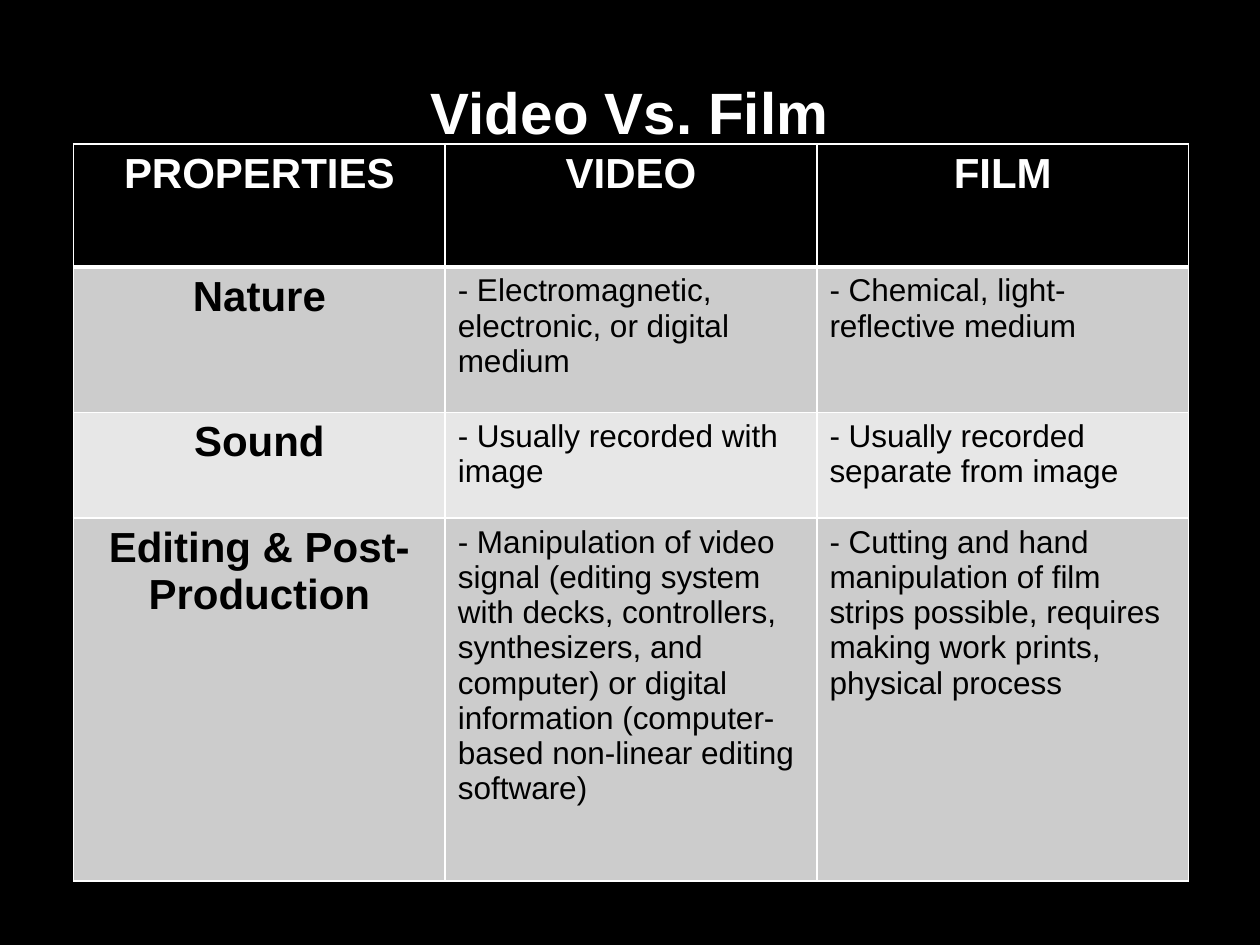
from typing import NamedTuple

from lxml import etree
from pptx import Presentation
from pptx.dml.color import RGBColor
from pptx.enum.text import PP_ALIGN
from pptx.oxml.ns import qn
from pptx.util import Pt

BLACK = RGBColor(0x00, 0x00, 0x00)
WHITE = RGBColor(0xFF, 0xFF, 0xFF)
DARK_BAND = RGBColor(0xCC, 0xCC, 0xCC)
LIGHT_BAND = RGBColor(0xE7, 0xE7, 0xE7)
LEFT, CENTER = PP_ALIGN.LEFT, PP_ALIGN.CENTER

FONT = "Arial"
TABLE_LEFT, TABLE_TOP = 42, 82.3
COLUMN_WIDTH = 212.4
THIN, THICK = 1, 3


class ComparisonRow(NamedTuple):
    height: float
    label: str
    video: str
    film: str


ROWS = [
    ComparisonRow(70.3, "PROPERTIES", "VIDEO", "FILM"),
    ComparisonRow(83, "Nature", "- Electromagnetic, electronic, or digital medium",
                  "- Chemical, light-reflective medium"),
    ComparisonRow(60.5, "Sound", "- Usually recorded with image",
                  "- Usually recorded separate from image"),
    ComparisonRow(207.3, "Editing & Post-Production",
                  "- Manipulation of video signal (editing system with decks, "
                  "controllers, synthesizers, and computer) or digital information "
                  "(computer-based non-linear editing software)",
                  "- Cutting and hand manipulation of film strips possible, "
                  "requires making work prints, physical process"),
]


def write_text(frame, text: str, *, size: float, color: RGBColor = BLACK,
               bold: bool = False, align=LEFT) -> None:
    frame.word_wrap = True
    para = frame.paragraphs[0]
    para.alignment = align
    span = para.add_run()
    span.text = text
    span.font.name = FONT
    span.font.size = Pt(size)
    span.font.bold = bold
    span.font.color.rgb = color


def set_borders(cell, **widths: float) -> None:
    """Draw white borders; keys are L, R, T and B, in that order."""
    properties = cell._tc.get_or_add_tcPr()
    for index, (side, width) in enumerate(widths.items()):
        line = etree.Element(qn(f"a:ln{side}"), w=str(Pt(width)))
        fill = etree.SubElement(line, qn("a:solidFill"))
        etree.SubElement(fill, qn("a:srgbClr"), val=str(WHITE))
        properties.insert(index, line)


def add_title(page, text: str) -> None:
    box = page.shapes.add_textbox(Pt(0), Pt(36.7), Pt(720), Pt(46))
    box.text_frame.margin_top = Pt(7)
    write_text(box.text_frame, text, size=33.3, color=WHITE, bold=True, align=CENTER)


def add_comparison(page, rows: list[ComparisonRow]) -> None:
    columns = len(ComparisonRow._fields) - 1
    table = page.shapes.add_table(
        len(rows), columns, Pt(TABLE_LEFT), Pt(TABLE_TOP),
        Pt(columns * COLUMN_WIDTH), Pt(sum(row.height for row in rows))).table
    for column in table.columns:
        column.width = Pt(COLUMN_WIDTH)
    for r, row in enumerate(rows):
        table.rows[r].height = Pt(row.height)
        header = r == 0
        band = BLACK if header else DARK_BAND if r % 2 else LIGHT_BAND
        for c, text in enumerate(row[1:]):
            cell = table.cell(r, c)
            cell.fill.solid()
            cell.fill.fore_color.rgb = band
            heading = header or c == 0
            write_text(cell.text_frame, text, size=24 if heading else 18,
                       color=WHITE if header else BLACK, bold=heading,
                       align=CENTER if heading else LEFT)
            set_borders(cell, L=THIN, R=THIN, T=THICK if r == 1 else THIN,
                        B=THICK if header else THIN)


def main() -> None:
    deck = Presentation()
    deck.slide_width, deck.slide_height = Pt(720), Pt(540)
    page = deck.slides.add_slide(deck.slide_layouts[6])
    page.background.fill.solid()
    page.background.fill.fore_color.rgb = BLACK
    add_title(page, "Video Vs. Film")
    add_comparison(page, ROWS)
    deck.save("out.pptx")


if __name__ == "__main__":
    main()
